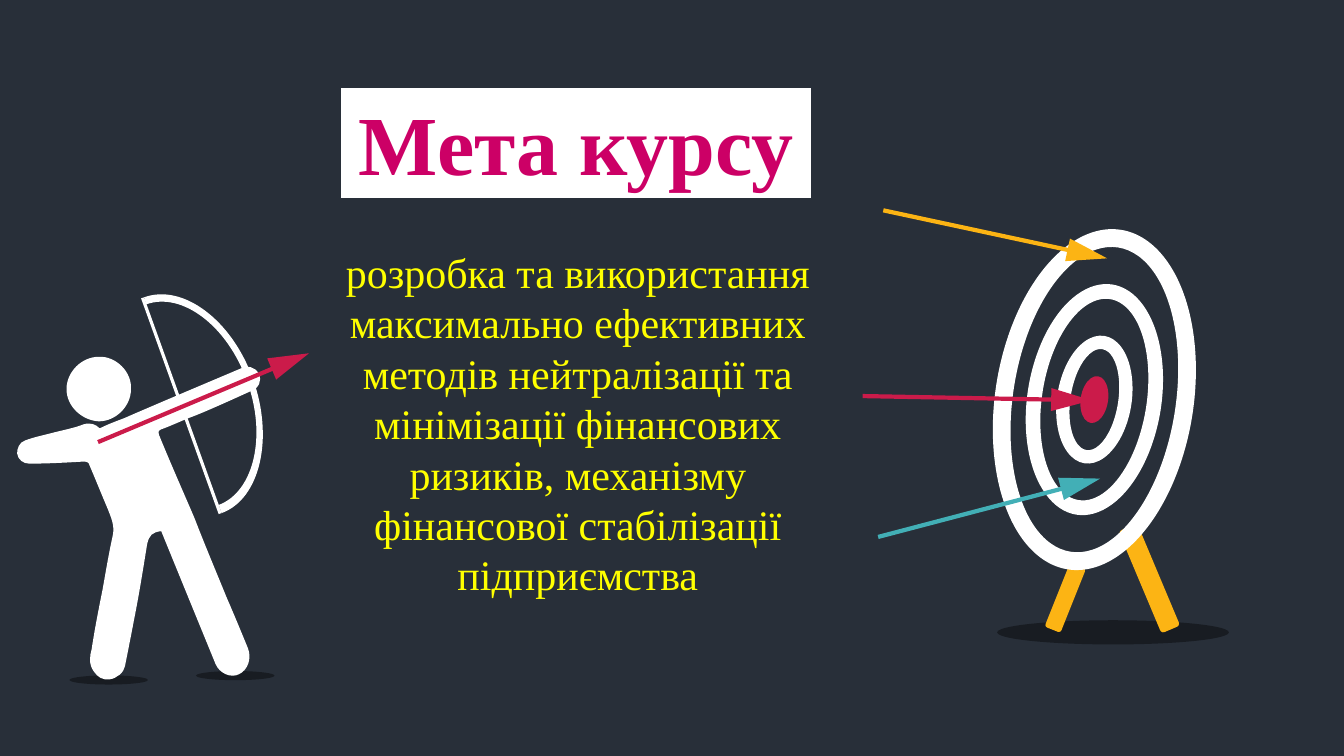
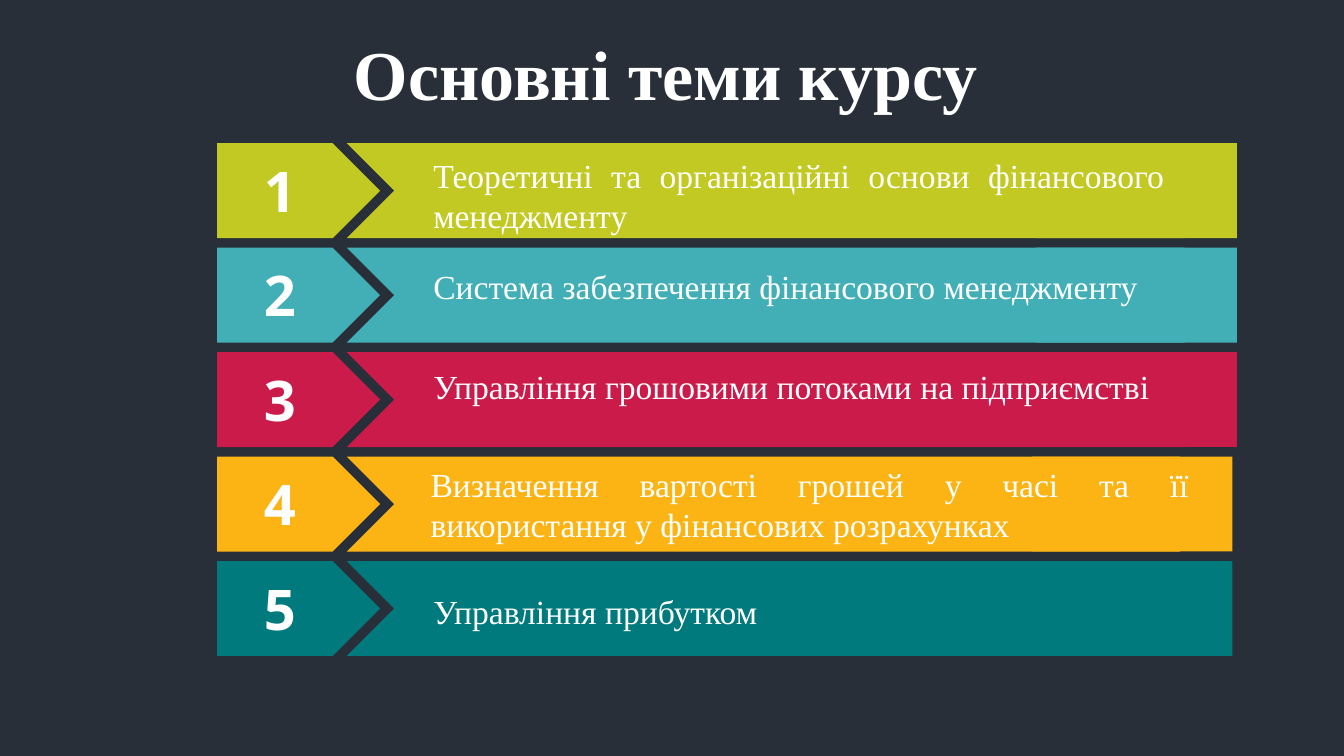
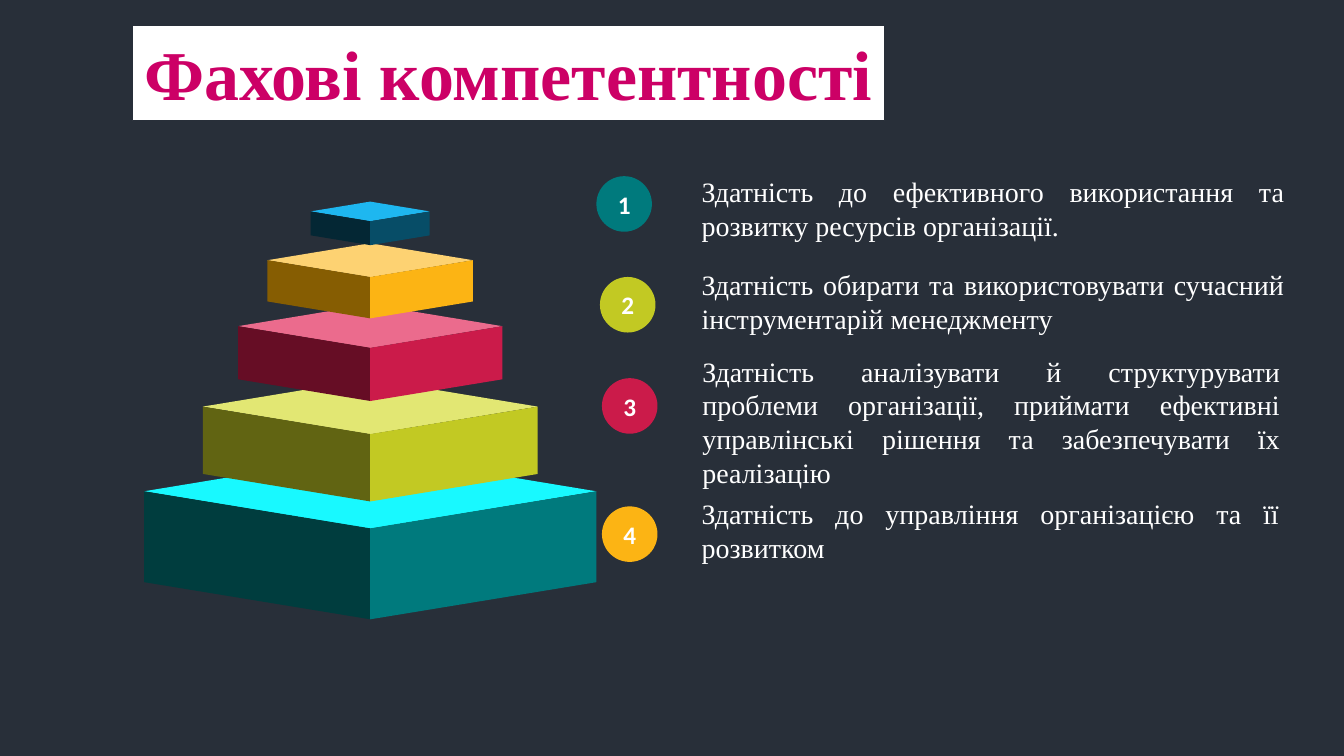
import math
import dataclasses
import lxml.etree
import pptx
import pptx.util
import pptx.dml.color
import pptx.enum.shapes
import pptx.enum.text
import pptx.oxml.ns

Cm = pptx.util.Cm
Pt = pptx.util.Pt
PRESET = pptx.enum.shapes.MSO_SHAPE
ALIGN = pptx.enum.text.PP_ALIGN
ANCHOR = pptx.enum.text.MSO_ANCHOR
rgb = pptx.dml.color.RGBColor.from_string
qn = pptx.oxml.ns.qn


@dataclasses.dataclass(frozen=True)
class Theme:
    night: str = "282F39"
    white: str = "FFFFFF"
    black: str = "000000"
    magenta: str = "CC0066"
    yellow: str = "FFFF00"
    red: str = "CB1B4A"
    teal: str = "42AFB6"
    amber: str = "FCB414"
    lime: str = "C2C923"
    pine: str = "007A7D"
    serif: str = "Times New Roman"
    number_font: str = "Open Sans"
    badge_font: str = "Calibri"
    hero_size: int = 60
    title_size: int = 50
    number_size: int = 40
    goal_size: int = 30
    topic_size: int = 24
    skill_size: int = 20
    badge_size: int = 18


theme = Theme()


def add_figure(slide, preset, left, top, width, height, colour, rotation=0):
    figure = slide.shapes.add_shape(preset, Cm(left), Cm(top), Cm(width), Cm(height))
    figure.shadow.inherit = False
    figure.fill.solid()
    figure.fill.fore_color.rgb = rgb(colour)
    figure.line.fill.background()
    figure.rotation = rotation
    return figure


def write(holder, text, size, colour, align=ALIGN.CENTER, font=theme.serif, bold=False):
    frame = holder.text_frame
    frame.word_wrap = True
    frame.vertical_anchor = ANCHOR.TOP
    frame.text = text
    paragraph = frame.paragraphs[0]
    paragraph.alignment = align
    style = paragraph.runs[0].font
    style.name = font
    style.size = Pt(size)
    style.bold = bold
    style.color.rgb = rgb(colour)


deck = pptx.Presentation()
deck.slide_width = Cm(33.87)
deck.slide_height = Cm(19.05)
deck.slide_master.background.fill.solid()
deck.slide_master.background.fill.fore_color.rgb = rgb(theme.night)

titles = [
    ("Мета курсу", 8.58, 2.19, 11.89, 2.81, theme.hero_size, True),
    ("Основні теми курсу", 3.35, 0.65, 26.87, 2.39, theme.title_size, False),
    ("Фахові компетентності", 3.34, 0.65, 18.95, 2.39, theme.title_size, True),
]
slides = []
for text, left, top, width, height, size, plated in titles:
    slide = deck.slides.add_slide(deck.slide_layouts[6])
    slides.append(slide)
    if plated:
        title = add_figure(slide, PRESET.RECTANGLE, left, top, width, height, theme.white)
        title.line.color.rgb = rgb(theme.night)
        title.line.width = Pt(1)
    else:
        title = slide.shapes.add_textbox(Cm(left), Cm(top), Cm(width), Cm(height))
    write(title, text, size, theme.magenta if plated else theme.white, bold=True)

goal_slide, topics_slide, skills_slide = slides

for left, top, width, height in [
    (1.75, 17.02, 1.98, 0.23),
    (4.94, 16.91, 1.98, 0.23),
    (25.13, 15.63, 5.84, 0.61),
]:
    ground_shadow = add_figure(goal_slide, PRESET.OVAL, left, top, width, height, theme.black)
    shade = ground_shadow._element.spPr.find(".//" + qn("a:srgbClr"))
    lxml.etree.SubElement(shade, qn("a:alpha")).set("val", "40000")

body = [
    (160, 527),
    (151, 528, 148, 531, 146, 540), (142, 565, 138, 590, 133, 615),
    (130, 631, 127, 646, 124, 661), (123, 667, 116, 673, 109, 674),
    (102, 675, 97, 672, 93, 666), (88, 659, 89, 651, 91, 644),
    (94, 624, 98, 604, 102, 584), (105, 567, 108, 549, 112, 531),
    (114, 521, 110, 513, 107, 505), (101, 491, 95, 476, 89, 462),
    (88, 458, 86, 458, 82, 458), (65, 459, 47, 460, 29, 460),
    (23, 460, 18, 456, 17, 450), (17, 445, 19, 439, 25, 437),
    (33, 434, 42, 432, 50, 430), (61, 427, 73, 425, 83, 421),
    (90, 419, 95, 421, 99, 425), (107, 421, 115, 418, 123, 415),
    (155, 401, 205, 380, 238, 366), (246, 362, 253, 364, 257, 371),
    (260, 378, 257, 385, 249, 388), (236, 394, 205, 408, 192, 413),
    (181, 417, 171, 422, 160, 426), (157, 427, 157, 429, 158, 432),
    (169, 459, 181, 486, 193, 514), (203, 540, 214, 566, 225, 593),
    (232, 609, 239, 626, 246, 643), (250, 653, 246, 665, 237, 669),
    (229, 673, 218, 668, 214, 659), (205, 637, 196, 615, 187, 593),
    (178, 571, 169, 549, 160, 527),
]
head = [
    (130, 386),
    (130, 403, 115, 418, 98, 418), (81, 417, 66, 403, 66, 386),
    (66, 369, 81, 354, 98, 354), (115, 353, 131, 369, 130, 386),
]
bow = [
    (143, 295),
    (145, 302, 145, 302, 145, 302), (181, 289, 226, 324, 245, 378),
    (265, 432, 252, 488, 217, 501), (220, 509, 220, 509, 220, 509),
    (258, 495, 272, 435, 251, 376), (230, 317, 181, 281, 143, 295),
]
bowstring = [(217, 510), (220, 509), (143, 295), (140, 296), (217, 510)]
for start, *segments in (body, head, bow, bowstring):
    vertices = [pair for segment in segments for pair in zip(segment[::2], segment[1::2])]
    builder = goal_slide.shapes.build_freeform(*start, scale=Cm(2.54) / 100)
    builder.add_line_segments(vertices, close=True)
    archer_part = builder.convert_to_shape()
    archer_part.shadow.inherit = False
    archer_part.fill.solid()
    archer_part.fill.fore_color.rgb = rgb(theme.white)
    archer_part.line.fill.background()
    if len(segments[0]) == 6:
        sides = list(archer_part._element.iter(qn("a:lnTo")))
        for first, second, third in zip(sides[::3], sides[1::3], sides[2::3]):
            curve = lxml.etree.Element(qn("a:cubicBezTo"))
            first.addprevious(curve)
            for side in (first, second, third):
                curve.append(side[0])
                side.getparent().remove(side)

for left, top, width, height, rotation in [
    (28.71, 13.18, 0.51, 2.79, 337.2),
    (26.63, 14.2, 0.43, 1.73, 21.8),
]:
    add_figure(goal_slide, PRESET.ROUNDED_RECTANGLE, left, top, width, height, theme.amber, rotation)

target_x, target_y, target_tilt = 27.58, 10.07, 8.9
for width, height, thickness in [(5, 8.66, 0.09), (3.38, 5.87, 0.11), (1.88, 3.25, 0.18), (0.69, 1.19, None)]:
    ring = add_figure(
        goal_slide, PRESET.DONUT if thickness else PRESET.OVAL,
        target_x - width / 2, target_y - height / 2, width, height,
        theme.white if thickness else theme.red, target_tilt)
    if thickness:
        ring.adjustments[0] = thickness

goal = goal_slide.shapes.add_textbox(Cm(7.76), Cm(6.09), Cm(13.61), Cm(9.25))
write(goal, "розробка та використання максимально ефективних методів нейтралізації та "
      "мінімізації фінансових ризиків, механізму фінансової стабілізації підприємства",
      theme.goal_size, theme.yellow)

tip_width, tip_length, tip_overlap = 0.58, 1.02, 0.08
for x1, y1, x2, y2, colour in [
    (2.47, 11.14, 7.39, 9.07, theme.red),
    (21.74, 9.98, 27.08, 10.08, theme.red),
    (22.13, 13.53, 27.31, 12.17, theme.teal),
    (22.26, 5.3, 27.48, 6.42, theme.amber),
]:
    shaft = goal_slide.shapes.add_connector(
        pptx.enum.shapes.MSO_CONNECTOR.STRAIGHT, Cm(x1), Cm(y1), Cm(x2), Cm(y2))
    shaft.line.color.rgb = rgb(colour)
    shaft.line.width = Pt(3)
    lxml.etree.SubElement(shaft._element.spPr, qn("a:effectLst"))
    angle = math.atan2(y2 - y1, x2 - x1)
    add_figure(
        goal_slide, PRESET.ISOSCELES_TRIANGLE,
        x2 - tip_overlap * math.cos(angle) - tip_width / 2,
        y2 - tip_overlap * math.sin(angle) - tip_length / 2,
        tip_width, tip_length, colour, math.degrees(angle) + 90)

topics = [
    ("Теоретичні та організаційні основи фінансового менеджменту",
     theme.lime, 31.17, 10.67, 3.78, 18.92, 2.31),
    ("Система забезпечення фінансового менеджменту",
     theme.teal, 31.17, 10.67, 6.58, 18.92, 1.27),
    ("Управління грошовими потоками на підприємстві",
     theme.red, 31.17, 10.67, 9.09, 18.92, 1.27),
    ("Визначення вартості грошей у часі та її використання у фінансових розрахунках",
     theme.amber, 31.06, 10.6, 11.56, 19.61, 2.31),
    ("Управління прибутком",
     theme.pine, 31.06, 10.67, 14.76, 18.92, 1.27),
]
first_band_top, last_band_top, band_height = 3.61, 14.14, 2.39
band_pitch = (last_band_top - first_band_top) / (len(topics) - 1)
chevron_left, band_tail = 8.74, 5.05
for index, (text, colour, band_end, left, text_top, width, height) in enumerate(topics):
    top = first_band_top + index * band_pitch
    for preset, part_left, part_width in [
        (PRESET.PENTAGON, 5.47, 4.11),
        (PRESET.CHEVRON, chevron_left, band_end - chevron_left - 0.13),
        (PRESET.RECTANGLE, band_end - band_tail, band_tail),
    ]:
        add_figure(topics_slide, preset, part_left, top, part_width, band_height, colour)
    number = topics_slide.shapes.add_textbox(Cm(5.64), Cm(top + 0.2), Cm(2.82), Cm(1.96))
    write(number, str(index + 1), theme.number_size, theme.white, font=theme.number_font, bold=True)
    topic = topics_slide.shapes.add_textbox(Cm(left), Cm(text_top), Cm(width), Cm(height))
    write(topic, text, theme.topic_size, theme.white, ALIGN.JUSTIFY)

pyramid_x = 9.33
for top, width, lid_colour, left_colour, right_colour in [
    (11.44, 11.4, "18F9FF", "003D3E", theme.pine),
    (9.55, 8.44, "E2E773", "616412", theme.lime),
    (7.67, 6.66, "EB6B8D", "660D25", theme.red),
    (6.13, 5.18, "FDD272", "865D02", theme.amber),
    (5.08, 3, "1EB7F0", "042734", "074D67"),
]:
    half = width / 2
    lid_height = width * 0.165
    face_height = width * 0.283
    add_figure(skills_slide, PRESET.FLOWCHART_DECISION, pyramid_x - half, top, width, lid_height, lid_colour)
    face_middle = top + lid_height / 2 + face_height / 2
    for side, colour in ((-1, left_colour), (1, right_colour)):
        face = add_figure(
            skills_slide, PRESET.PARALLELOGRAM,
            pyramid_x + side * half / 2 - face_height / 2, face_middle - half / 2,
            face_height, half, colour, 90)
        face.adjustments[0] = 0.29
        if side == 1:
            face._element.spPr.find(qn("a:xfrm")).set("flipV", "1")

skills = [
    ("Здатність до ефективного використання та розвитку ресурсів організації.",
     theme.pine, 15.03, 4.44, 17.43, 4.28, 15.19, 1.96),
    ("Здатність обирати та використовувати сучасний інструментарій менеджменту",
     theme.lime, 15.12, 6.98, 17.43, 6.62, 15.19, 1.96),
    ("Здатність аналізувати й структурувати проблеми організації, приймати ефективні "
     "управлінські рішення та забезпечувати їх реалізацію",
     theme.red, 15.17, 9.53, 17.45, 8.8, 15.06, 3.68),
    ("Здатність до управління організацією та її розвитком",
     theme.amber, 15.17, 12.76, 17.43, 12.39, 15.06, 1.96),
]
for index, (text, colour, badge_left, badge_top, left, top, width, height) in enumerate(skills, 1):
    badge = add_figure(skills_slide, PRESET.OVAL, badge_left, badge_top, 1.4, 1.4, colour)
    write(badge, str(index), theme.badge_size, theme.white, font=theme.badge_font, bold=True)
    badge.text_frame.vertical_anchor = ANCHOR.MIDDLE
    badge.text_frame.word_wrap = False
    skill = skills_slide.shapes.add_textbox(Cm(left), Cm(top), Cm(width), Cm(height))
    write(skill, text, theme.skill_size, theme.white, ALIGN.JUSTIFY)

deck.save("out.pptx")
